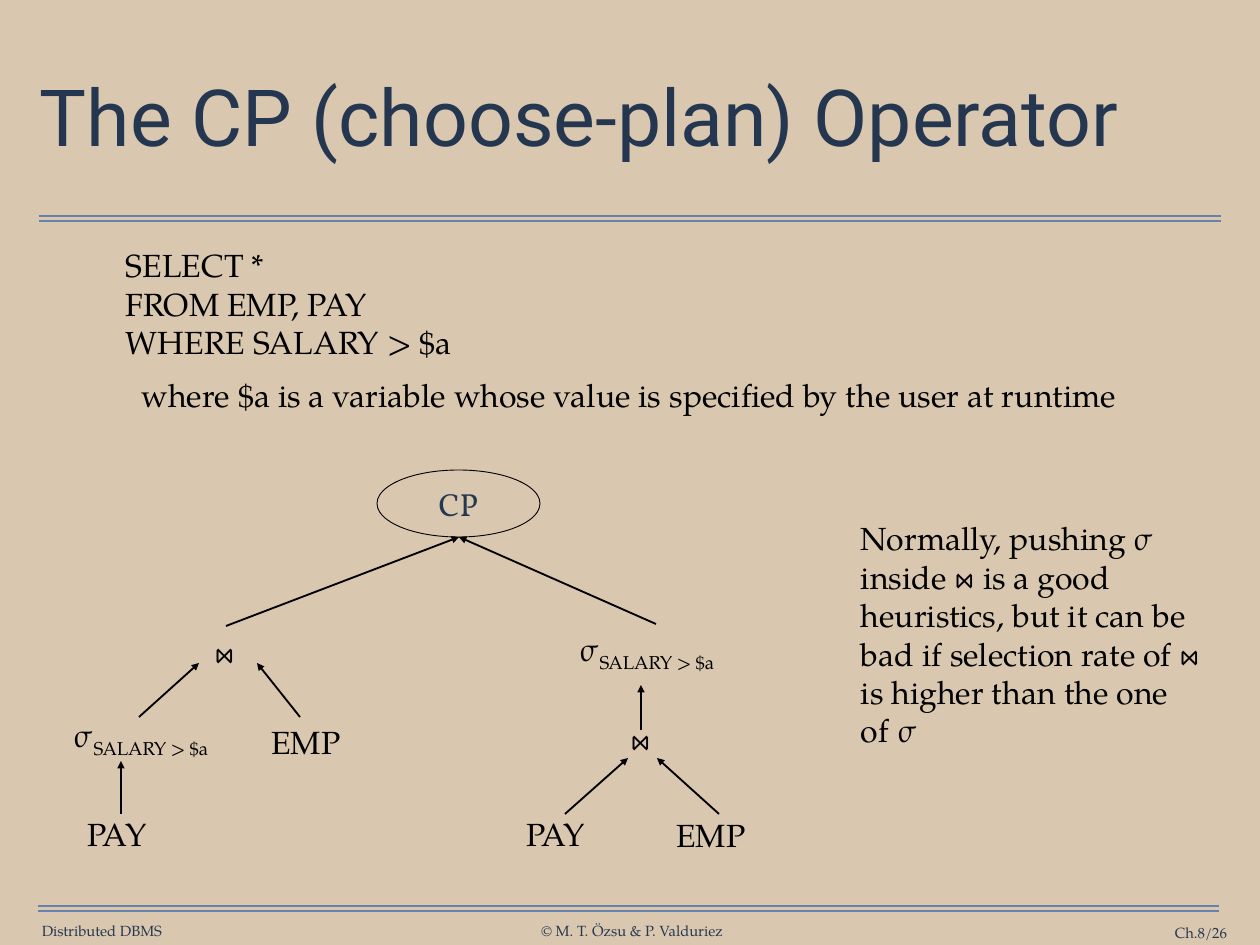
from dataclasses import dataclass

from lxml.etree import SubElement
from pptx import Presentation
from pptx.dml.color import RGBColor
from pptx.enum.shapes import MSO_CONNECTOR as Connector, MSO_SHAPE as Shape
from pptx.enum.text import MSO_ANCHOR as Anchor, PP_ALIGN as Align
from pptx.oxml.ns import qn
from pptx.util import Pt


@dataclass(frozen=True)
class Theme:
    background: str = "D9C8AF"
    title: str = "253750"
    accent: str = "263750"
    rule: str = "6682AA"
    ink: str = "000000"
    heading_font: str = "Roboto"
    body_font: str = "TeX Gyre Pagella"
    node_font: str = "Vollkorn"
    title_size: int = 64
    body_size: int = 26
    footer_size: int = 12


THEME = Theme()
PX = 10320
WIDTH, HEIGHT = 1260, 945

TITLE = "The CP (choose-plan) Operator"
QUERY = "SELECT *\vFROM EMP, PAY\vWHERE SALARY > $a"
NOTE = "where $a is a variable whose value is specified by the user at runtime"
REMARK = ("Normally, pushing σ inside ⋈ is a good heuristics, but it can be bad "
          "if selection rate of ⋈ is higher than the one of σ")
FOOTERS = [
    ("Distributed DBMS", (41, 922, 122, 18), Align.CENTER),
    ("© M. T. Özsu & P. Valduriez", (540, 922, 184, 18), Align.CENTER),
    ("Ch.8/26", (1091, 924, 136, 18), Align.RIGHT),
]
RULES = [(39, 216, 1221), (39, 221, 1221), (38, 906, 1219), (38, 911, 1219)]
CP_NODE = (377, 470, 163, 67)
NODES = [
    ("⋈", 225, 633),
    ("σ", 141, 716),
    ("EMP", 306, 723),
    ("PAY", 117, 814),
    ("σ", 647, 630),
    ("⋈", 641, 720),
    ("PAY", 556, 814),
    ("EMP", 711, 816),
]
SUBSCRIPTS = {"σ": "SALARY > $a"}
NODE_WIDTH, NODE_HEIGHT = 160, 40
CP_FOOT = (CP_NODE[0] + CP_NODE[2] // 2 + 1, CP_NODE[1] + CP_NODE[3])
ARROWS = [
    ((226, 626), CP_FOOT),
    ((656, 624), CP_FOOT),
    ((139, 717), (199, 663)),
    ((300, 717), (257, 663)),
    ((121, 814), (121, 761)),
    ((641, 730), (641, 685)),
    ((565, 814), (628, 758)),
    ((719, 814), (657, 758)),
]


def color(value):
    return RGBColor.from_string(value)


def emu(*lengths):
    return [length * PX for length in lengths]


def style(p, size=THEME.body_size, font=THEME.body_font, ink=THEME.ink):
    for r in p.runs:
        r.font.size = Pt(size)
        r.font.name = font
        r.font.color.rgb = color(ink)


def prepare(tf, inset=0, anchor=Anchor.TOP):
    tf.word_wrap = True
    tf.vertical_anchor = anchor
    tf.margin_left = tf.margin_right = tf.margin_top = tf.margin_bottom = inset * PX


def add_text(s, text, box, align=Align.LEFT, inset=0, anchor=Anchor.TOP, **look):
    tf = s.shapes.add_textbox(*emu(*box)).text_frame
    prepare(tf, inset, anchor)
    tf.text = text
    p = tf.paragraphs[0]
    p.alignment = align
    style(p, **look)
    return tf


def add_line(s, start, end, ink, width, arrow=False):
    line = s.shapes.add_connector(Connector.STRAIGHT, *emu(*start, *end))
    line.line.color.rgb = color(ink)
    line.line.width = Pt(width)
    if arrow:
        SubElement(line.line._get_or_add_ln(), qn("a:tailEnd"), type="triangle")
    SubElement(line._element.spPr, qn("a:effectLst"))


def add_query(s):
    tf = add_text(s, QUERY, (34, 241, 1191, 190), inset=5)
    tf.paragraphs[0]._p.get_or_add_pPr().set("marL", str(87 * PX))
    p = tf.add_paragraph()
    p.text = NOTE
    p.alignment = Align.CENTER
    p.space_before = Pt(12)
    style(p)


def add_node(s, text, center, top):
    box = (center - NODE_WIDTH // 2, top, NODE_WIDTH, NODE_HEIGHT)
    p = add_text(s, text, box, Align.CENTER).paragraphs[0]
    if text in SUBSCRIPTS:
        r = p.add_run()
        r.text = SUBSCRIPTS[text]
        style(p)
        r._r.get_or_add_rPr().set("baseline", "-25000")


def add_cp(s):
    sp = s.shapes.add_shape(Shape.OVAL, *emu(*CP_NODE))
    sp.shadow.inherit = False
    sp.fill.background()
    sp.line.color.rgb = color(THEME.ink)
    sp.line.width = Pt(0.75)
    tf = sp.text_frame
    prepare(tf, anchor=Anchor.MIDDLE)
    tf.text = "CP"
    p = tf.paragraphs[0]
    p.alignment = Align.CENTER
    style(p, font=THEME.node_font, ink=THEME.accent)


def main():
    prs = Presentation()
    prs.slide_width, prs.slide_height = emu(WIDTH, HEIGHT)
    s = prs.slides.add_slide(prs.slide_layouts[6])
    s.background.fill.solid()
    s.background.fill.fore_color.rgb = color(THEME.background)

    for left, y, right in RULES:
        add_line(s, (left, y), (right, y), THEME.rule, 1)
    for text, box, align in FOOTERS:
        add_text(s, text, box, align, anchor=Anchor.MIDDLE,
                 size=THEME.footer_size, ink=THEME.accent)

    title = add_text(s, TITLE, (35, 43, 1191, 156), inset=5, anchor=Anchor.MIDDLE,
                     size=THEME.title_size, font=THEME.heading_font, ink=THEME.title)
    title.paragraphs[0].line_spacing = 0.9
    add_query(s)

    add_cp(s)
    for node in NODES:
        add_node(s, *node)
    for start, end in ARROWS:
        add_line(s, start, end, THEME.ink, 1.5, arrow=True)
    add_text(s, REMARK, (861, 519, 340, 234))

    prs.save("out.pptx")


if __name__ == "__main__":
    main()
